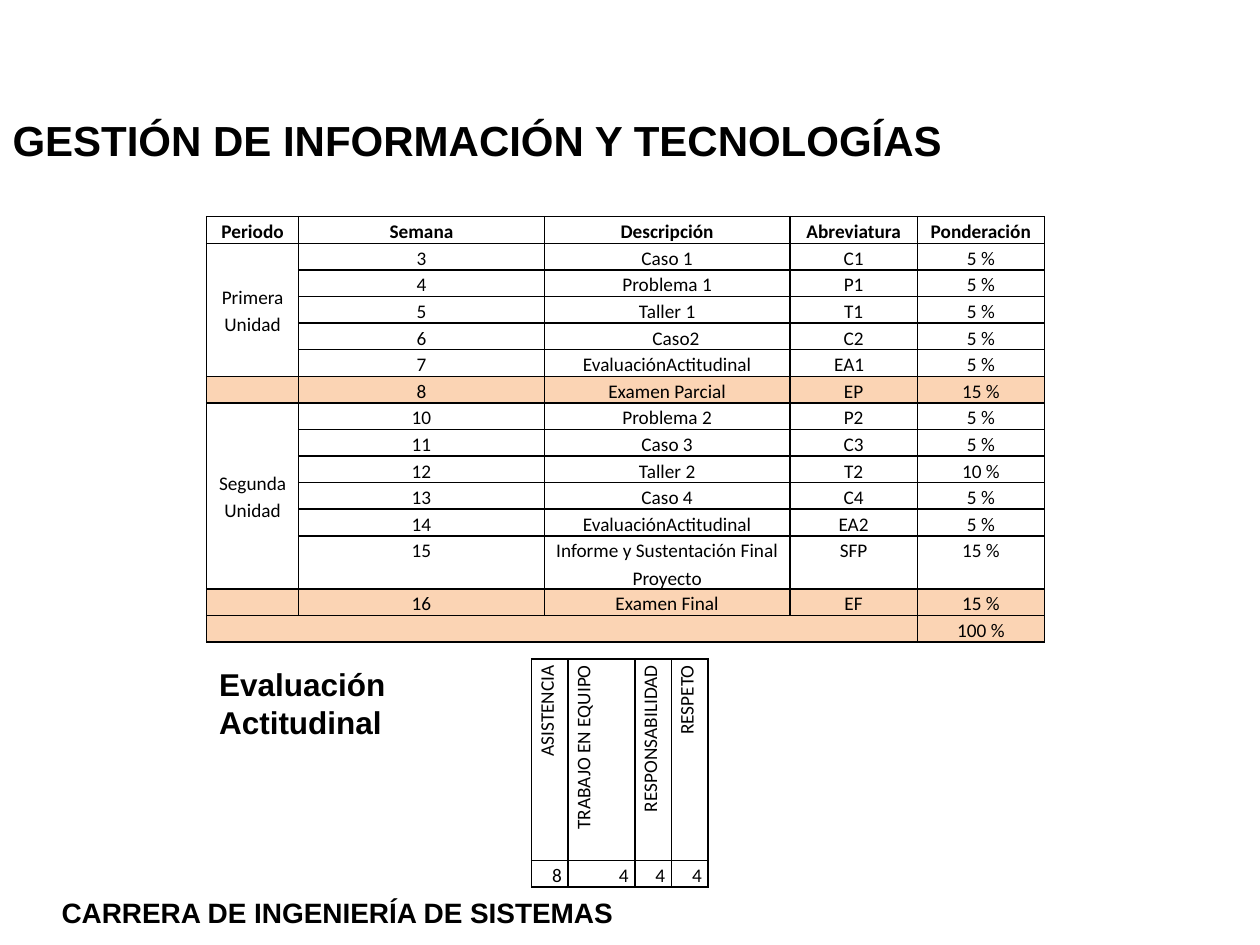
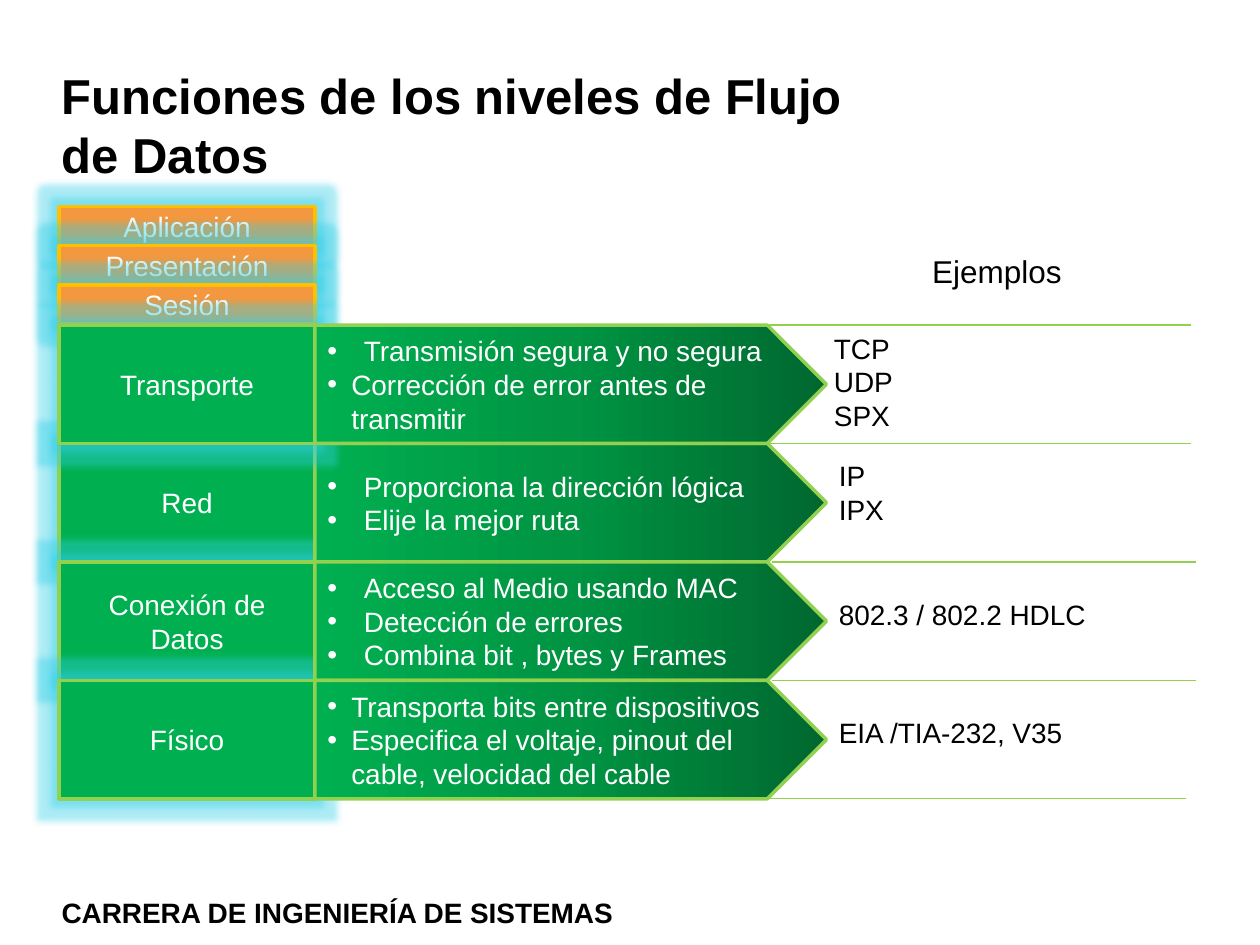
"""Builds two course slides: the grading plan and the data-flow layers."""
import lxml.etree
import pptx
import pptx.dml.color
import pptx.enum.shapes
import pptx.enum.text
import pptx.oxml.ns
import pptx.util

Inches = pptx.util.Inches
Pt = pptx.util.Pt
qn = pptx.oxml.ns.qn
Shape = pptx.enum.shapes.MSO_SHAPE
Align = pptx.enum.text.PP_ALIGN
Anchor = pptx.enum.text.MSO_ANCHOR

COLORS = {
    "black": "000000", "white": "FFFFFF", "exam": "FBD4B4",
    "green": "00B050", "mid_green": "009443", "dark_green": "00682F",
    "lime": "92D050", "orange": "F3983F", "gold": "FFC000", "glow": "33D0E8",
}
FOOTER = "CARRERA DE INGENIERÍA DE SISTEMAS"

GRADING = [
    ("Periodo", "Semana", "Descripción", "Abreviatura", "Ponderación"),
    ("Primera Unidad", "3", "Caso 1", "C1", "5 %"),
    ("", "4", "Problema 1", "P1", "5 %"),
    ("", "5", "Taller 1", "T1", "5 %"),
    ("", "6", "Caso2", "C2", "5 %"),
    ("", "7", "EvaluaciónActitudinal", "EA1", "5 %"),
    ("", "8", "Examen Parcial", "EP", "15 %"),
    ("Segunda Unidad", "10", "Problema 2", "P2", "5 %"),
    ("", "11", "Caso 3", "C3", "5 %"),
    ("", "12", "Taller 2", "T2", "10 %"),
    ("", "13", "Caso 4", "C4", "5 %"),
    ("", "14", "EvaluaciónActitudinal", "EA2", "5 %"),
    ("", "15", "Informe y Sustentación Final Proyecto", "SFP", "15 %"),
    ("", "16", "Examen Final", "EF", "15 %"),
    ("", "", "", "", "100 %"),
]
EXAM_ROWS = (6, 13, 14)
GRADING_MERGES = [((1, 0), (5, 0)), ((7, 0), (12, 0)), ((14, 0), (14, 3))]
SHIFTED_CELLS = {
    (4, 2): {"indent": 0.14},
    (5, 3): {"indent": 0.28, "align": Align.LEFT},
}
ATTITUDE = [
    ("ASISTENCIA", "TRABAJO EN EQUIPO", "RESPONSABILIDAD", "RESPETO"),
    ("8", "4", "4", "4"),
]

UPPER_LAYERS = ["Aplicación", "Presentación", "Sesión"]
NARROW, WIDE = 0.19, 0.29
FLOW_LAYERS = [
    ("Transporte", [("Transmisión segura y no segura", WIDE),
                    ("Corrección de error antes de transmitir", NARROW)]),
    ("Red", [("Proporciona la dirección lógica", WIDE),
             ("Elije la mejor ruta", WIDE)]),
    ("Conexión de Datos", [("Acceso al Medio usando MAC", WIDE),
                           ("Detección de errores", WIDE),
                           ("Combina bit , bytes y Frames", WIDE)]),
    ("Físico", [("Transporta bits entre dispositivos", NARROW),
                ("Especifica el voltaje, pinout del cable, velocidad del cable",
                 NARROW)]),
]
EXAMPLES = [
    (6.52, 2.58, 2.25, ["TCP", "UDP", "SPX"]),
    (6.56, 3.59, 1, ["IP", "IPX"]),
    (6.56, 4.69, 2.6, ["802.3 / 802.2 HDLC"]),
    (6.56, 5.63, 3.2, ["EIA /TIA-232, V35"]),
]
DIVIDERS = [(6.09, 9.45), (6.05, 9.45), (6.13, 9.49), (6.13, 9.49), (6.05, 9.41)]
LAYER_LEFT, LAYER_WIDTH = 0.47, 2.03
FLOW_TOP, FLOW_HEIGHT = 2.58, 0.94
UPPER_TOP, UPPER_HEIGHT = 1.64, 0.31


def rgb(name):
    """Return the named colour."""
    return pptx.dml.color.RGBColor.from_string(COLORS[name])


def write(para, text, size=16, font="Arial", color="black", bold=False,
          align=Align.LEFT, spacing=None, indent=0, bullet=False):
    """Put formatted text into a paragraph."""
    properties = para._p.get_or_add_pPr()
    if indent:
        properties.set("marL", str(Inches(indent)))
    if bullet:
        properties.set("indent", str(-Inches(indent)))
        lxml.etree.SubElement(properties, qn("a:buFont"), typeface="Arial")
        lxml.etree.SubElement(properties, qn("a:buChar"), char="•")
    para.alignment = align
    if spacing:
        para.line_spacing = spacing
    if not text:
        lxml.etree.SubElement(para._p, qn("a:endParaRPr"), sz=str(size * 100))
        return
    span = para.add_run()
    span.text = text
    span.font.size = Pt(size)
    span.font.name = font
    span.font.bold = bold
    span.font.color.rgb = rgb(color)


def write_lines(frame, lines, **style):
    """Fill a text frame with one paragraph for each line."""
    frame.word_wrap = True
    for number, line in enumerate(lines):
        para = frame.paragraphs[0] if number == 0 else frame.add_paragraph()
        write(para, line, **style)


def add_text(page, lines, left, top, width, height, **style):
    """Add a text box."""
    box = page.shapes.add_textbox(
        Inches(left), Inches(top), Inches(width), Inches(height))
    write_lines(box.text_frame, lines, **style)


def add_page(deck, title, left, top, width, height, size):
    """Add a page with its title and the common footer."""
    page = deck.slides.add_slide(deck.slide_layouts.get_by_name("Title Only"))
    box = page.shapes.title
    box.left, box.top = Inches(left), Inches(top)
    box.width, box.height = Inches(width), Inches(height)
    frame = box.text_frame
    frame.auto_size = pptx.enum.text.MSO_AUTO_SIZE.NONE
    frame.vertical_anchor = Anchor.MIDDLE
    write_lines(frame, [title], size=size, bold=True)
    add_text(page, [FOOTER], 0.39, 7.06, 5.08, 0.37, bold=True)
    return page


def add_grid(page, left, top, widths, heights):
    """Add a plain table with the given column widths and row heights."""
    table = page.shapes.add_table(
        len(heights), len(widths), Inches(left), Inches(top),
        Inches(sum(widths)), Inches(sum(heights))).table
    table.first_row = table.horz_banding = False
    for column, width in zip(table.columns, widths):
        column.width = Inches(width)
    for row, height in zip(table.rows, heights):
        row.height = Inches(height)
    return table


def format_cell(cell, text, margin, anchor, fill=None, **style):
    """Set the borders, fill, margins and text of a table cell."""
    properties = cell._tc.get_or_add_tcPr()
    for side in ("lnL", "lnR", "lnT", "lnB"):
        line = lxml.etree.SubElement(properties, qn("a:" + side), w=str(Pt(1)))
        solid = lxml.etree.SubElement(line, qn("a:solidFill"))
        lxml.etree.SubElement(solid, qn("a:srgbClr"), val=COLORS["black"])
    if fill:
        cell.fill.solid()
        cell.fill.fore_color.rgb = rgb(fill)
    else:
        cell.fill.background()
    cell.margin_left = cell.margin_right = Inches(margin)
    cell.margin_top = cell.margin_bottom = 0
    cell.vertical_anchor = anchor
    write(cell.text_frame.paragraphs[0], text,
          size=11, font="Calibri", spacing=1.15, **style)


def add_grading_table(page):
    """Add the table of weekly grades."""
    table = add_grid(page, 1.64, 1.72, [0.73, 1.95, 1.95, 1.01, 1.01],
                     [0.21] * len(GRADING))
    for row, texts in enumerate(GRADING):
        for column, text in enumerate(texts):
            style = {"align": Align.CENTER, **SHIFTED_CELLS.get((row, column), {})}
            format_cell(table.cell(row, column), text, 0.07,
                        Anchor.TOP if column else Anchor.MIDDLE,
                        fill="exam" if row in EXAM_ROWS else None,
                        bold=row == 0, **style)
    for first, last in GRADING_MERGES:
        table.cell(*first).merge(table.cell(*last))


def add_attitude_table(page):
    """Add the table of attitude points with upright headings."""
    table = add_grid(page, 4.22, 5.23, [0.29, 0.53, 0.29, 0.29], [1.6, 0.21])
    for row, texts in enumerate(ATTITUDE):
        for column, text in enumerate(texts):
            cell = table.cell(row, column)
            format_cell(cell, text, 0.05, Anchor.BOTTOM, align=Align.RIGHT)
            if row == 0:
                cell._tc.tcPr.set("vert", "vert270")


def add_block(page, kind, left, top, width, height, line):
    """Add an outlined shape without shadow."""
    block = page.shapes.add_shape(
        kind, Inches(left), Inches(top), Inches(width), Inches(height))
    block.line.color.rgb = rgb(line)
    block.line.width = Pt(2)
    block.shadow.inherit = False
    block.text_frame.vertical_anchor = Anchor.MIDDLE
    return block


def add_layer(page, name, top, height, fill, line):
    """Add a glowing box that names a layer."""
    block = add_block(page, Shape.RECTANGLE, LAYER_LEFT, top,
                      LAYER_WIDTH, height, line)
    block.fill.solid()
    block.fill.fore_color.rgb = rgb(fill)
    effects = block._element.spPr.find(qn("a:effectLst"))
    glow = lxml.etree.SubElement(effects, qn("a:glow"), rad=str(Pt(8)))
    tint = lxml.etree.SubElement(glow, qn("a:srgbClr"), val=COLORS["glow"])
    lxml.etree.SubElement(tint, qn("a:alpha"), val="40000")
    write_lines(block.text_frame, [name], color="white", align=Align.CENTER)


def add_function_arrow(page, items, top):
    """Add an arrow that lists what a layer does."""
    arrow = add_block(page, Shape.PENTAGON, LAYER_LEFT + LAYER_WIDTH, top,
                      4.06, FLOW_HEIGHT, "lime")
    arrow.fill.gradient()
    arrow.fill.gradient_angle = 180
    stops = arrow._element.spPr.find(qn("a:gradFill")).find(qn("a:gsLst"))
    for stop in list(stops):
        stops.remove(stop)
    for position, name in ((0, "dark_green"), (50, "mid_green"), (100, "green")):
        stop = lxml.etree.SubElement(stops, qn("a:gs"), pos=str(position * 1000))
        lxml.etree.SubElement(stop, qn("a:srgbClr"), val=COLORS[name])
    frame = arrow.text_frame
    for number, (text, indent) in enumerate(items):
        para = frame.paragraphs[0] if number == 0 else frame.add_paragraph()
        write(para, text, color="white", indent=indent, bullet=True)


def add_divider(page, start, end, top):
    """Add a thin horizontal line."""
    line = page.shapes.add_connector(
        pptx.enum.shapes.MSO_CONNECTOR.STRAIGHT,
        Inches(start), Inches(top), Inches(end), Inches(top))
    line.line.color.rgb = rgb("lime")
    line.line.width = Pt(0.75)
    lxml.etree.SubElement(line._element.spPr, qn("a:effectLst"))


def build_grading_page(deck):
    """Build the page of grades."""
    page = add_page(deck, "GESTIÓN DE INFORMACIÓN Y TECNOLOGÍAS",
                    0, 0.86, 7.65, 0.5, 24)
    add_grading_table(page)
    add_text(page, ["Evaluación Actitudinal"], 1.64, 5.23, 2.52, 0.94,
             size=18, bold=True, align=Align.JUSTIFY)
    add_attitude_table(page)


def build_layers_page(deck):
    """Build the page of data-flow layers."""
    page = add_page(deck, "Funciones de los niveles de Flujo de Datos",
                    0.39, 0.47, 6.95, 1.04, 28)
    for index, name in enumerate(UPPER_LAYERS):
        add_layer(page, name, UPPER_TOP + index * UPPER_HEIGHT, UPPER_HEIGHT,
                  "orange", "gold")
    tops = [FLOW_TOP + index * FLOW_HEIGHT for index in range(len(DIVIDERS))]
    for group in ((1, 2, 3), (0,)):
        for index in group:
            add_layer(page, FLOW_LAYERS[index][0], tops[index], FLOW_HEIGHT,
                      "green", "lime")
        for index in group:
            add_function_arrow(page, FLOW_LAYERS[index][1], tops[index])
    for (start, end), top in zip(DIVIDERS, tops):
        add_divider(page, start, end, top)
    add_text(page, ["Ejemplos"], 7.3, 1.95, 1.4, 0.4, size=18)
    for left, top, width, lines in EXAMPLES:
        add_text(page, lines, left, top, width, 0.1 + 0.27 * len(lines))


def main():
    """Build and save the deck."""
    deck = pptx.Presentation()
    deck.slide_width, deck.slide_height = Inches(10), Inches(7.5)
    build_grading_page(deck)
    build_layers_page(deck)
    deck.save("out.pptx")


if __name__ == "__main__":
    main()
